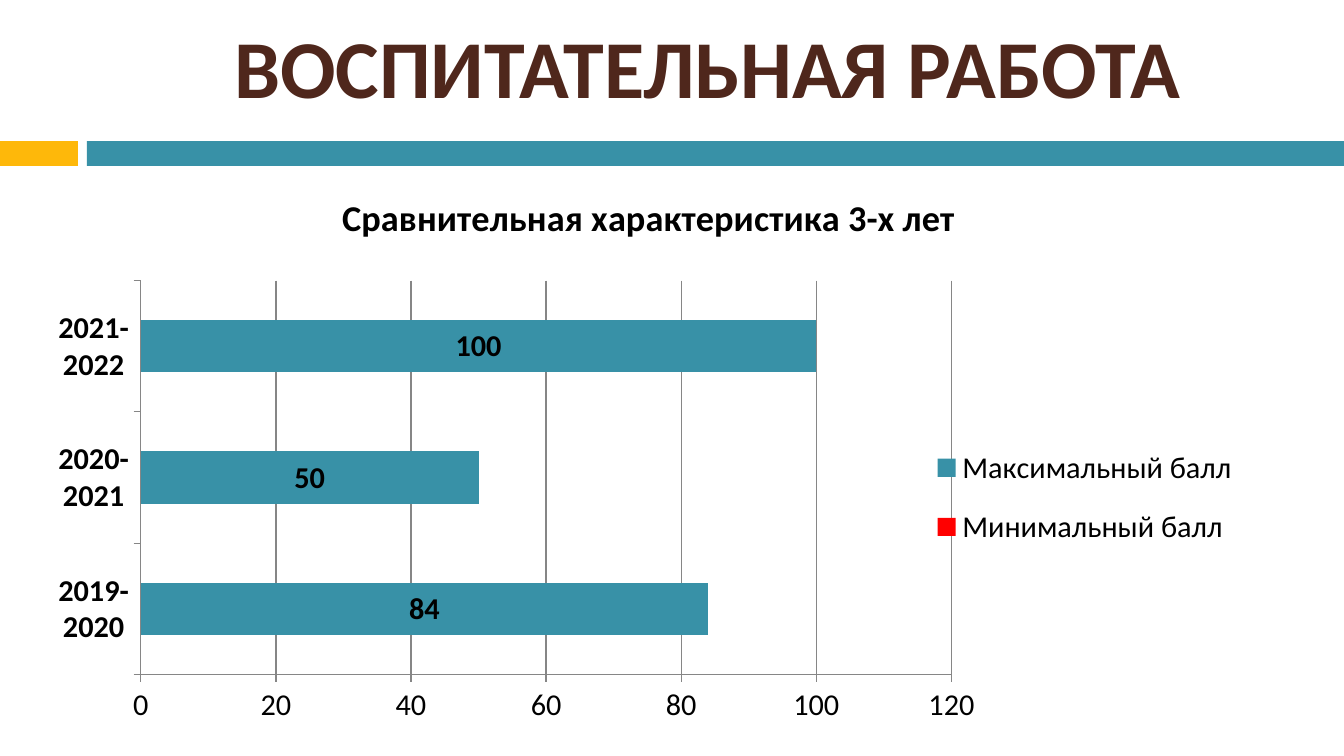
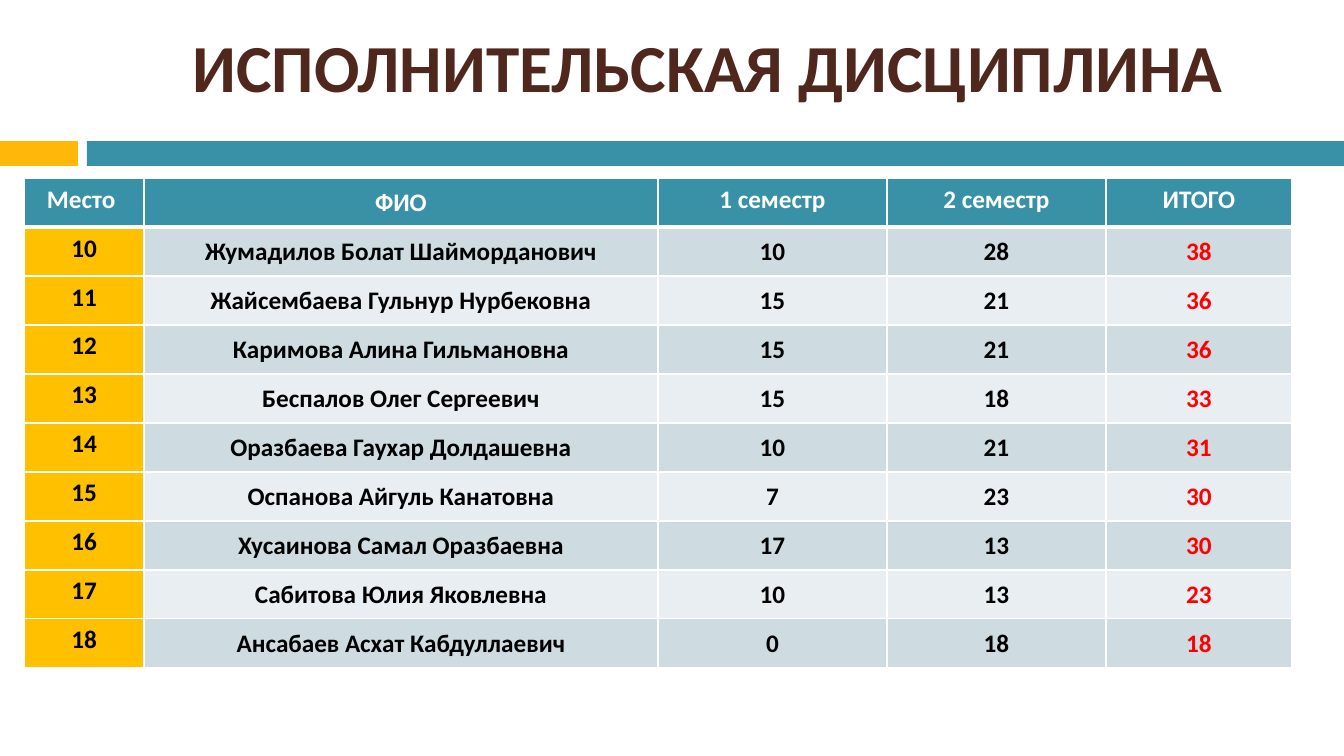
import pptx
import pptx.chart.data
import pptx.dml.color
import pptx.enum.chart
import pptx.enum.shapes
import pptx.enum.text
import pptx.oxml
import pptx.oxml.ns
import pptx.util
from dataclasses import dataclass

RATING_TITLE = "ВОСПИТАТЕЛЬНАЯ РАБОТА"
CHART_TITLE = "Сравнительная характеристика 3-х лет"
YEARS = ["2019-2020", "2020-2021", "2021-2022"]
MAXIMUM_SCORE = ("Максимальный балл", [84, 50, 100])
MINIMUM_SCORE = ("Минимальный балл", [0, 0, 0])

DISCIPLINE_TITLE = "ИСПОЛНИТЕЛЬСКАЯ ДИСЦИПЛИНА"
HEADER = ["Место ", "ФИО", "1 семестр", "2 семестр", "ИТОГО"]
FIRST_PLACE = 10
RESULTS = [
    ("Жумадилов Болат Шайморданович", 10, 28),
    ("Жайсембаева Гульнур Нурбековна", 15, 21),
    ("Каримова Алина Гильмановна", 15, 21),
    ("Беспалов Олег Сергеевич", 15, 18),
    ("Оразбаева Гаухар Долдашевна", 10, 21),
    ("Оспанова Айгуль Канатовна", 7, 23),
    ("Хусаинова Самал Оразбаевна", 17, 13),
    ("Сабитова Юлия Яковлевна", 10, 13),
    ("Ансабаев Асхат Кабдуллаевич", 0, 18),
]


@dataclass(frozen=True)
class Theme:
    font: str = "Calibri"
    white: str = "FFFFFF"
    black: str = "000000"
    red: str = "FF0000"
    title: str = "4F271C"
    teal: str = "3891A7"
    amber: str = "FEB80A"
    place: str = "FFC000"
    stripes: tuple = ("CEDCE1", "E8EEF1")
    grid: str = "868686"
    large_title_size: float = 48.9
    title_size: float = 40
    chart_title_size: float = 21.6
    chart_size: float = 18
    table_size: float = 15


THEME = Theme()
SLIDE_SIZE = (1344, 756)
BANDS = [((0, 141, 78, 25), THEME.amber), ((87, 141, 1257, 25), THEME.teal)]
TITLE_BOX = (108, 5, 1199, 121)
CHART_BOX = (44, 168, 1210, 563)
PLOT_LAYOUT = {"x": 0.08, "y": 0.2, "w": 0.67, "h": 0.7}
LEGEND_LAYOUT = {"x": 0.73, "y": 0.46, "w": 0.26, "h": 0.25}
TABLE_CORNER = (24, 178)
COLUMN_WIDTHS = [120, 514, 229, 219, 186]
ROW_HEIGHT = 49


def px(length):
    return pptx.util.Emu(round(length * 914400 / 121))


def rgb(value):
    return pptx.dml.color.RGBColor.from_string(value)


def style_font(font, size, color, bold=False):
    font.name = THEME.font
    font.size = pptx.util.Pt(size)
    font.bold = bold
    font.color.rgb = rgb(color)


def write(text_frame, text, size, color):
    """Set one centred bold line."""
    text_frame.text = text
    paragraph = text_frame.paragraphs[0]
    paragraph.alignment = pptx.enum.text.PP_ALIGN.CENTER
    style_font(paragraph.runs[0].font, size, color, bold=True)


def add_titled_slide(presentation, title, size):
    slide = presentation.slides.add_slide(presentation.slide_layouts[6])
    for box, color in BANDS:
        band = slide.shapes.add_shape(
            pptx.enum.shapes.MSO_SHAPE.RECTANGLE, *map(px, box))
        band.shadow.inherit = False
        band.fill.solid()
        band.fill.fore_color.rgb = rgb(color)
        band.line.fill.background()
    text_frame = slide.shapes.add_textbox(*map(px, TITLE_BOX)).text_frame
    text_frame.word_wrap = True
    text_frame.vertical_anchor = pptx.enum.text.MSO_ANCHOR.MIDDLE
    write(text_frame, title, size, THEME.title)
    return slide


def place_by_hand(element, layout, successors, inner=False):
    """Give a chart part a manual layout, in fractions of the chart."""
    target = '<c:layoutTarget val="inner"/>' if inner else ""
    modes = "".join(f'<c:{axis}Mode val="edge"/>' for axis in "xy")
    sizes = "".join(f'<c:{key} val="{value}"/>' for key, value in layout.items())
    for old in element.findall(pptx.oxml.ns.qn("c:layout")):
        element.remove(old)
    element.insert_element_before(pptx.oxml.parse_xml(
        f'<c:layout {pptx.oxml.ns.nsdecls("c")}><c:manualLayout>'
        f"{target}{modes}{sizes}</c:manualLayout></c:layout>"), *successors)


def add_score_chart(slide):
    data = pptx.chart.data.CategoryChartData()
    data.categories = YEARS
    for name, values in (MAXIMUM_SCORE, MINIMUM_SCORE):
        data.add_series(name, values)
    chart = slide.shapes.add_chart(
        pptx.enum.chart.XL_CHART_TYPE.BAR_STACKED, *map(px, CHART_BOX), data).chart
    style_font(chart.font, THEME.chart_size, THEME.black)

    chart.has_title = True
    title_frame = chart.chart_title.text_frame
    write(title_frame, CHART_TITLE, THEME.chart_title_size, THEME.black)
    chart.chart_title.include_in_layout = False

    chart.has_legend = True
    chart.legend.position = pptx.enum.chart.XL_LEGEND_POSITION.RIGHT
    chart.legend.include_in_layout = False
    style_font(chart.legend.font, THEME.chart_size, THEME.black)

    plot = chart.plots[0]
    plot.vary_by_categories = False
    plot.gap_width = 150
    plot.overlap = 100
    for series, color in zip(plot.series, (THEME.teal, THEME.red)):
        series.format.fill.solid()
        series.format.fill.fore_color.rgb = rgb(color)
    labels = plot.series[0].data_labels
    labels.show_value = True
    labels.position = pptx.enum.chart.XL_LABEL_POSITION.CENTER
    style_font(labels.font, THEME.chart_size, THEME.black, bold=True)

    value_axis = chart.value_axis
    value_axis.minimum_scale, value_axis.maximum_scale = 0, 120
    value_axis.major_unit = 20
    value_axis.has_major_gridlines = True
    lines = [value_axis.major_gridlines.format.line]
    for axis, bold in ((chart.category_axis, True), (value_axis, False)):
        axis.major_tick_mark = pptx.enum.chart.XL_TICK_MARK.OUTSIDE
        style_font(axis.tick_labels.font, THEME.chart_size, THEME.black, bold)
        lines.append(axis.format.line)
    for line in lines:
        line.color.rgb = rgb(THEME.grid)
        line.width = pptx.util.Pt(0.75)

    plot_area = chart.element.chart.plotArea
    place_by_hand(plot_area, PLOT_LAYOUT, ["c:barChart"], inner=True)
    place_by_hand(chart.legend._element, LEGEND_LAYOUT,
                  ["c:overlay", "c:spPr", "c:txPr"])


def set_borders(cell, widths):
    """Draw white left, right, top and bottom borders, widths in points."""
    properties = cell._tc.get_or_add_tcPr()
    for index, (side, width) in enumerate(zip("LRTB", widths)):
        properties.insert(index, pptx.oxml.parse_xml(
            f'<a:ln{side} {pptx.oxml.ns.nsdecls("a")} w="{pptx.util.Pt(width)}">'
            f'<a:solidFill><a:srgbClr val="{THEME.white}"/></a:solidFill>'
            f"</a:ln{side}>"))


def cell_colors(row, column):
    """Return the fill and text colours of a table cell."""
    if row == 0:
        return THEME.teal, THEME.white
    if column == 0:
        return THEME.place, THEME.black
    is_total = column == len(HEADER) - 1
    return THEME.stripes[(row - 1) % 2], THEME.red if is_total else THEME.black


def add_results_table(slide):
    rows = [HEADER] + [
        [place, name, first, second, first + second]
        for place, (name, first, second) in enumerate(RESULTS, FIRST_PLACE)]
    size = (sum(COLUMN_WIDTHS), ROW_HEIGHT * len(rows))
    table = slide.shapes.add_table(
        len(rows), len(HEADER), *map(px, TABLE_CORNER + size)).table
    for column, width in zip(table.columns, COLUMN_WIDTHS):
        column.width = px(width)
    for row_index, row in enumerate(rows):
        table.rows[row_index].height = px(ROW_HEIGHT)
        for column_index, value in enumerate(row):
            cell = table.cell(row_index, column_index)
            fill, color = cell_colors(row_index, column_index)
            write(cell.text_frame, str(value), THEME.table_size, color)
            set_borders(cell, (1, 1, 3 if row_index == 1 else 1,
                               3 if row_index == 0 else 1))
            cell.fill.solid()
            cell.fill.fore_color.rgb = rgb(fill)
            is_result = row_index > 0 and column_index > 0
            if is_result or column_index == 1:
                cell.vertical_anchor = pptx.enum.text.MSO_ANCHOR.MIDDLE
            if is_result:
                cell.margin_left = cell.margin_right = cell.margin_top = px(1)
                cell.margin_bottom = 0


def main():
    presentation = pptx.Presentation()
    presentation.slide_width, presentation.slide_height = map(px, SLIDE_SIZE)
    add_score_chart(add_titled_slide(
        presentation, RATING_TITLE, THEME.large_title_size))
    add_results_table(add_titled_slide(
        presentation, DISCIPLINE_TITLE, THEME.title_size))
    presentation.save("out.pptx")


if __name__ == "__main__":
    main()
